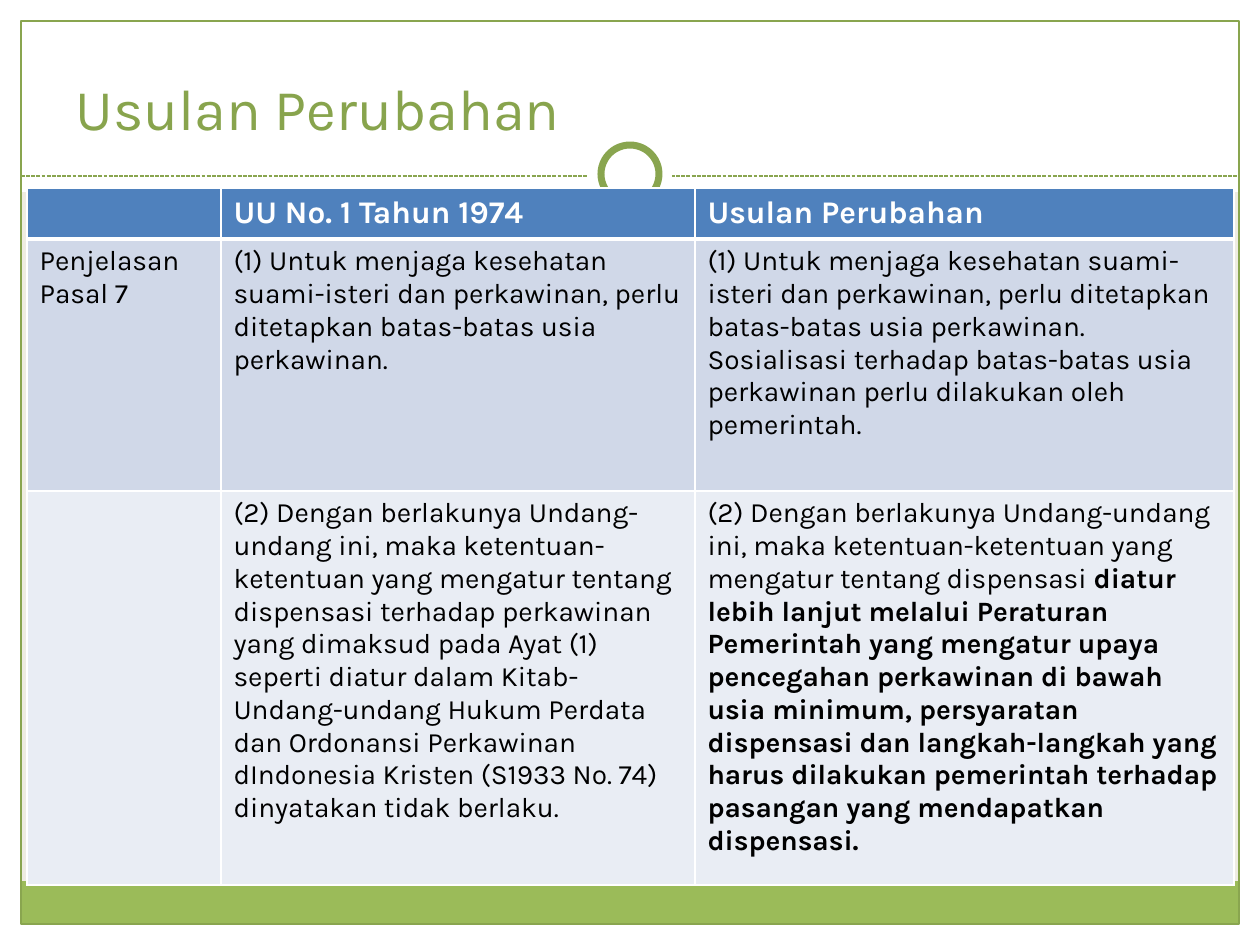
from lxml.etree import SubElement
from pptx import Presentation
from pptx.dml.color import RGBColor
from pptx.enum.dml import MSO_LINE
from pptx.enum.shapes import MSO_CONNECTOR, MSO_SHAPE
from pptx.enum.text import MSO_ANCHOR, PP_ALIGN
from pptx.oxml.ns import qn
from pptx.util import Emu, Pt

TITLE = "Usulan Perubahan"
ROWS = [
    [[], [("UU No. 1 Tahun 1974", True)], [("Usulan Perubahan", True)]],
    [
        [("Penjelasan Pasal 7", False)],
        [("(1) Untuk menjaga kesehatan suami-isteri dan perkawinan, perlu "
          "ditetapkan batas-batas usia perkawinan.", False)],
        [("(1) Untuk menjaga kesehatan suami-isteri dan perkawinan, perlu "
          "ditetapkan batas-batas usia perkawinan. Sosialisasi terhadap "
          "batas-batas usia perkawinan perlu dilakukan oleh pemerintah.", False)],
    ],
    [
        [],
        [("(2) Dengan berlakunya Undang-undang ini, maka ketentuan-ketentuan "
          "yang mengatur tentang dispensasi terhadap perkawinan yang dimaksud "
          "pada Ayat (1) seperti diatur dalam Kitab-Undang-undang Hukum Perdata "
          "dan Ordonansi Perkawinan dIndonesia Kristen (S1933 No. 74) "
          "dinyatakan tidak berlaku.", False)],
        [("(2) Dengan berlakunya Undang-undang ini, maka ketentuan-ketentuan "
          "yang mengatur tentang dispensasi ", False),
         ("diatur lebih lanjut melalui Peraturan Pemerintah yang mengatur upaya "
          "pencegahan perkawinan di bawah usia minimum, persyaratan dispensasi "
          "dan langkah-langkah yang harus dilakukan pemerintah terhadap "
          "pasangan yang mendapatkan dispensasi.", True)],
    ],
]
THEME = {
    "font": "Karla",
    "background": "EEECE1", "white": "FFFFFF", "text": "000000",
    "title": "88A44D", "line": "89A54F", "footer": "9BBB59",
    "rows": ["4F81BD", "D0D8E8", "E9EDF4"],
    "title_size": 33, "header_size": 18, "body_size": 16,
    "thin": 0.75, "ring": 4, "border": 1, "header_border": 3,
}
WIDTH, HEIGHT, MARGIN = 1260, 945, 21
INNER = WIDTH - 2 * MARGIN
RULE_Y, RING_Y = 176, 174
TABLE_X, TABLE_Y = 27, 188
COLUMNS = [194, 474, 539]
ROW_HEIGHTS = [48, 252, 394]


def px(n):
    return Emu(round(n * 914400 / 126))


def rgb(name):
    return RGBColor.from_string(THEME.get(name, name))


def add_panel(shapes, kind, box, fill=None, line=None, width=0):
    s = shapes.add_shape(kind, *map(px, box))
    s.shadow.inherit = False
    if fill:
        s.fill.solid()
        s.fill.fore_color.rgb = rgb(fill)
    else:
        s.fill.background()
    if line:
        s.line.color.rgb = rgb(line)
        s.line.width = Pt(width)
    else:
        s.line.fill.background()


def add_run(p, text, size, color, bold=False):
    r = p.add_run()
    r.text = text
    r.font.name = THEME["font"]
    r.font.size = Pt(THEME[size])
    r.font.color.rgb = rgb(color)
    r.font.bold = bold


def set_border(cell, side, width):
    ln = SubElement(cell._tc.get_or_add_tcPr(), qn(f"a:ln{side}"), w=str(Pt(width)))
    fill = SubElement(ln, qn("a:solidFill"))
    SubElement(fill, qn("a:srgbClr"), val=THEME["white"])


def add_decoration(shapes):
    bands = [
        (0, HEIGHT - MARGIN, WIDTH, MARGIN), (0, 0, WIDTH, 192),
        (0, 0, MARGIN, HEIGHT), (WIDTH - MARGIN, 0, MARGIN, HEIGHT),
    ]
    for box in bands:
        add_panel(shapes, MSO_SHAPE.RECTANGLE, box, "white")
    add_panel(shapes, MSO_SHAPE.RECTANGLE, (MARGIN, 881, INNER, 43), "footer")
    add_panel(shapes, MSO_SHAPE.RECTANGLE,
              (MARGIN, MARGIN, INNER, HEIGHT - 2 * MARGIN),
              line="line", width=THEME["thin"])
    rule = shapes.add_connector(MSO_CONNECTOR.STRAIGHT, px(MARGIN), px(RULE_Y),
                                px(WIDTH - MARGIN), px(RULE_Y))
    rule.line.color.rgb = rgb("line")
    rule.line.width = Pt(THEME["thin"])
    rule.line.dash_style = MSO_LINE.SQUARE_DOT
    SubElement(rule._element.spPr, qn("a:effectLst"))
    for size, line in ((84, None), (58, "line")):
        box = ((WIDTH - size) / 2, RING_Y - size / 2, size, size)
        add_panel(shapes, MSO_SHAPE.OVAL, box, "white", line, THEME["ring"])


def add_title(shapes):
    s = shapes.title
    s.left, s.top, s.width, s.height = map(px, (63, 38, 620, 110))
    tf = s.text_frame
    tf.word_wrap = True
    tf.vertical_anchor = MSO_ANCHOR.BOTTOM
    p = tf.paragraphs[0]
    p.alignment = PP_ALIGN.LEFT
    add_run(p, TITLE, "title_size", "title")
    shapes.element.append(s.element)


def add_comparison(shapes):
    table = shapes.add_table(len(ROWS), len(COLUMNS), px(TABLE_X), px(TABLE_Y),
                             px(sum(COLUMNS)), px(sum(ROW_HEIGHTS))).table
    for column, width in zip(table.columns, COLUMNS):
        column.width = px(width)
    for row, height in zip(table.rows, ROW_HEIGHTS):
        row.height = px(height)
    for i, row in enumerate(ROWS):
        size, color = ("body_size", "text") if i else ("header_size", "white")
        widths = {side: THEME["border"] for side in "LRTB"}
        if i < 2:
            widths["T" if i else "B"] = THEME["header_border"]
        for j, runs in enumerate(row):
            cell = table.cell(i, j)
            for side, width in widths.items():
                set_border(cell, side, width)
            cell.fill.solid()
            cell.fill.fore_color.rgb = rgb(THEME["rows"][i])
            for text, bold in runs:
                add_run(cell.text_frame.paragraphs[0], text, size, color, bold)


def main():
    prs = Presentation()
    prs.slide_width, prs.slide_height = px(WIDTH), px(HEIGHT)
    slide = prs.slides.add_slide(prs.slide_layouts[5])
    slide.background.fill.solid()
    slide.background.fill.fore_color.rgb = rgb("background")
    add_decoration(slide.shapes)
    add_title(slide.shapes)
    add_comparison(slide.shapes)
    prs.save("out.pptx")


if __name__ == "__main__":
    main()
